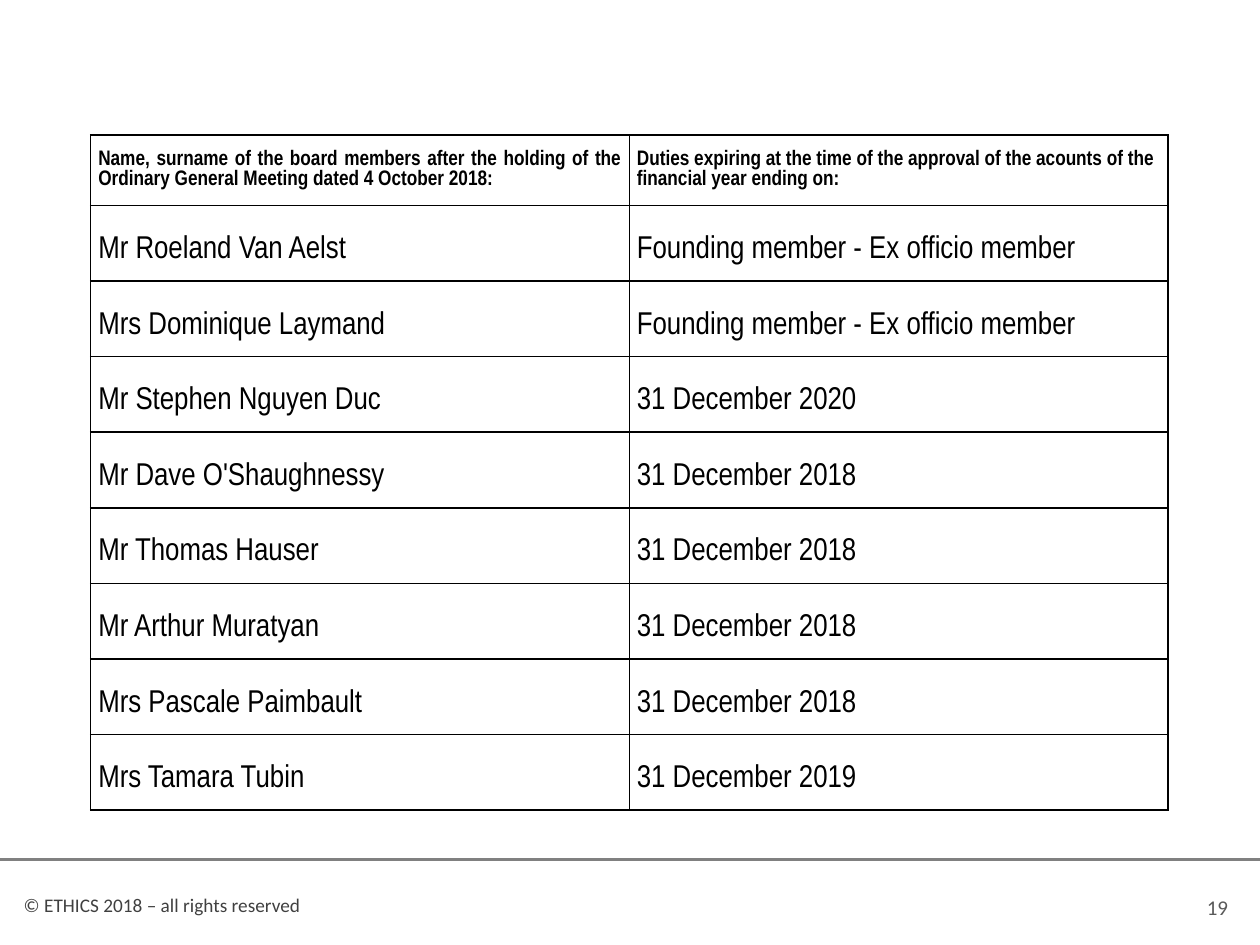
from lxml import etree
from pptx import Presentation
from pptx.dml.color import RGBColor
from pptx.enum import shapes, text
from pptx.oxml import parse_xml
from pptx.oxml.ns import nsdecls, qn
from pptx.util import Inches, Pt

HEADERS = (
    "Name, surname of the board members after the holding of the "
    "Ordinary General Meeting dated 4 October 2018:",
    "Duties expiring at the time of the approval of the acounts of the "
    "financial year ending on:",
)
MEMBERS = [
    ("Mr Roeland Van Aelst", "Founding member - Ex officio member"),
    ("Mrs Dominique Laymand", "Founding member - Ex officio member"),
    ("Mr Stephen Nguyen Duc", "31 December 2020"),
    ("Mr Dave O'Shaughnessy", "31 December 2018"),
    ("Mr Thomas Hauser", "31 December 2018"),
    ("Mr Arthur Muratyan", "31 December 2018"),
    ("Mrs Pascale Paimbault", "31 December 2018"),
    ("Mrs Tamara Tubin", "31 December 2019"),
]


def rgb(value):
    return RGBColor.from_string(value)


def set_font(p, name, size, color, bold=False):
    p.font.name = name
    p.font.size = Pt(size)
    p.font.bold = bold
    p.font.color.rgb = rgb(color)


def add_borders(cell, color, width):
    """Draw all four sides; border elements must come before the fill."""
    tc_pr = cell._tc.get_or_add_tcPr()
    for i, side in enumerate(("lnL", "lnR", "lnT", "lnB")):
        tc_pr.insert(i, parse_xml(
            f'<a:{side} {nsdecls("a")} w="{Pt(width)}"><a:solidFill>'
            f'<a:srgbClr val="{color}"/></a:solidFill></a:{side}>'))


def fill_cell(cell, words, is_header, align):
    cell.margin_left = cell.margin_right = Inches(0.06)
    cell.margin_top = Inches(0 if is_header else 0.24)
    cell.margin_bottom = 0
    cell.vertical_anchor = (text.MSO_ANCHOR.MIDDLE if is_header
                            else text.MSO_ANCHOR.TOP)
    cell.fill.background()
    add_borders(cell, "000000", 1)
    p = cell.text_frame.paragraphs[0]
    p.text = words
    p.alignment = align
    set_font(p, "Arial Narrow", 12 if is_header else 18, "000000", is_header)


def add_board_table(slide, left, top, width, header_height, row_height):
    rows = [HEADERS] + MEMBERS
    height = header_height + row_height * len(MEMBERS)
    table = slide.shapes.add_table(len(rows), 2, Inches(left), Inches(top),
                                   Inches(width), Inches(height)).table
    table.horz_banding = False
    table.first_row = False
    for column in table.columns:
        column.width = Inches(width / 2)
    for r, values in enumerate(rows):
        is_header = r == 0
        table.rows[r].height = Inches(header_height if is_header else row_height)
        for c, words in enumerate(values):
            align = (text.PP_ALIGN.LEFT if is_header and c == 1
                     else text.PP_ALIGN.JUSTIFY)
            fill_cell(table.cell(r, c), words, is_header, align)


def add_label(slide, left, top, width, height):
    """Add an empty text box and return its paragraph."""
    box = slide.shapes.add_textbox(Inches(left), Inches(top),
                                   Inches(width), Inches(height))
    box.text_frame.word_wrap = True
    return box.text_frame.paragraphs[0]


def add_footer(slide, top, width):
    rule = slide.shapes.add_connector(shapes.MSO_CONNECTOR.STRAIGHT, 0,
                                      Inches(top), Inches(width), Inches(top))
    rule.line.color.rgb = rgb("808080")
    rule.line.width = Pt(1.5)
    etree.SubElement(rule._element.spPr, qn("a:effectLst"))

    p = add_label(slide, 0.09, top + 0.22, 3.54, 0.29)
    p.text = "© ETHICS 2018 – all rights reserved"
    set_font(p, "Calibri", 11, "404040")

    p = add_label(slide, width - 0.52, top + 0.23, 0.47, 0.3)
    p.text = "19"
    set_font(p, "Calibri", 12, "595959")


def main():
    prs = Presentation()
    prs.slide_width, prs.slide_height = Inches(10), Inches(7.5)
    slide = prs.slides.add_slide(prs.slide_layouts[6])
    add_footer(slide, top=6.82, width=10)
    add_board_table(slide, left=0.72, top=1.07, width=8.55,
                    header_height=0.56, row_height=0.6)
    prs.save("out.pptx")


if __name__ == "__main__":
    main()
